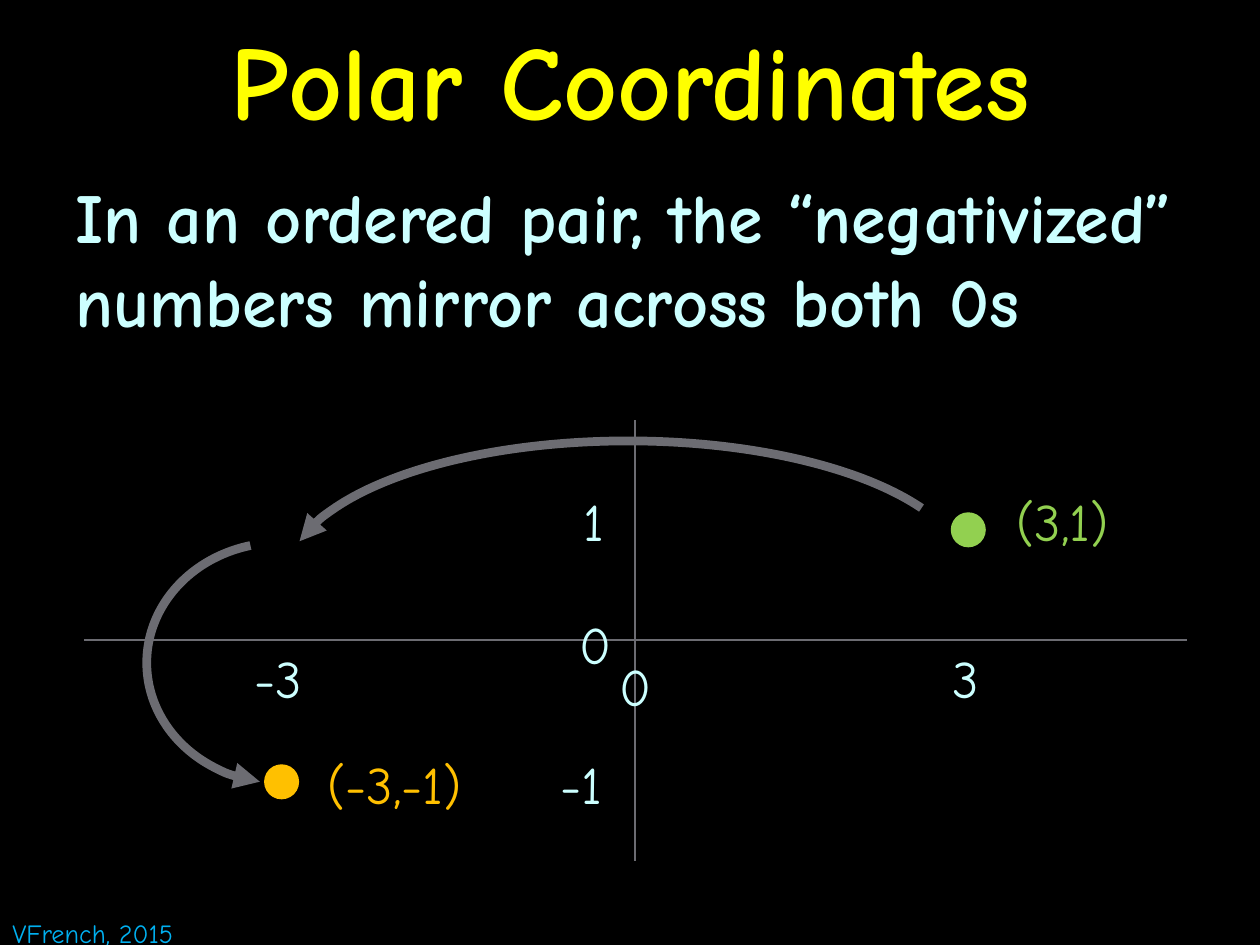
"""Build the Polar Coordinates slide on mirroring an ordered pair across both zeros."""
import dataclasses

import pptx
import pptx.dml.color
import pptx.enum.shapes
import pptx.enum.text
import pptx.oxml
import pptx.oxml.ns
import pptx.util

Inches = pptx.util.Inches
Pt = pptx.util.Pt
RGB = pptx.dml.color.RGBColor.from_string
SHAPE = pptx.enum.shapes.MSO_SHAPE
ANCHOR = pptx.enum.text.MSO_ANCHOR
ALIGN = pptx.enum.text.PP_ALIGN
AUTO = pptx.enum.text.MSO_AUTO_SIZE


@dataclasses.dataclass(frozen=True)
class Theme:
    font: str = "Comic Neue"
    background: str = "000000"
    title: str = "FFFF00"
    text: str = "CCFFFF"
    line: str = "6C6C72"
    credit: str = "00B0F0"
    start: str = "92D050"
    mirrored: str = "FFC000"
    title_size: int = 60
    body_size: int = 40
    label_size: int = 30
    credit_size: int = 15


theme = Theme()


def write(tf, text, size=theme.label_size, color=theme.text, bold=False, align=ALIGN.LEFT):
    p = tf.paragraphs[0]
    p.alignment = align
    r = p.add_run()
    r.text = text
    r.font.name = theme.font
    r.font.size = Pt(size)
    r.font.bold = bold
    r.font.color.rgb = RGB(color)
    return p


prs = pptx.Presentation()
prs.slide_width = Inches(10)
prs.slide_height = Inches(7.5)
s = prs.slides.add_slide(prs.slide_layouts[1])
s.background.fill.solid()
s.background.fill.fore_color.rgb = RGB(theme.background)

title, body = s.placeholders
title.left, title.top, title.width, title.height = map(Inches, (0, 0, 10, 1.25))
title.text_frame.auto_size = AUTO.NONE
title.text_frame.vertical_anchor = ANCHOR.MIDDLE
write(title.text_frame, "Polar Coordinates", size=theme.title_size, color=theme.title,
      bold=True, align=ALIGN.CENTER)

body.left, body.top, body.width, body.height = map(Inches, (0.5, 1.33, 9, 6.17))
body.text_frame.auto_size = AUTO.NONE
p = write(body.text_frame, "In an ordered pair, the “negativized” numbers mirror across both 0s",
          size=theme.body_size, bold=True)
pPr = p._p.get_or_add_pPr()
pPr.set("marL", "0")
pPr.set("indent", "0")
pPr.append(pptx.oxml.parse_xml(f'<a:buNone {pptx.oxml.ns.nsdecls("a")}/>'))

for x1, y1, x2, y2 in [(5.04, 6.83, 5.04, 3.33), (0.67, 5.08, 9.42, 5.08)]:
    axis = s.shapes.add_connector(pptx.enum.shapes.MSO_CONNECTOR.STRAIGHT,
                                  Inches(x1), Inches(y1), Inches(x2), Inches(y2))
    axis.line.color.rgb = RGB(theme.line)
    axis.line.width = Pt(0.75)
    axis._element.spPr.append(pptx.oxml.parse_xml(f'<a:effectLst {pptx.oxml.ns.nsdecls("a")}/>'))

labels = [
    ("3", 7.46, 5.08, 0.46, 0.61, theme.text, theme.label_size),
    ("-3", 1.92, 5.08, 0.63, 0.61, theme.text, theme.label_size),
    ("VFrench, 2015", 0, 7.23, 1.62, 0.35, theme.credit, theme.credit_size),
    ("0", 4.5, 4.81, 0.46, 0.61, theme.text, theme.label_size),
    ("1", 4.53, 3.83, 0.39, 0.61, theme.text, theme.label_size),
    ("(3,1)", 7.97, 3.83, 1.07, 0.61, theme.start, theme.label_size),
    ("(-3,-1)", 2.5, 5.92, 1.42, 0.61, theme.mirrored, theme.label_size),
    ("0", 4.82, 5.14, 0.46, 0.61, theme.text, theme.label_size),
    ("-1", 4.35, 5.92, 0.57, 0.61, theme.text, theme.label_size),
]
for text, x, y, w, h, color, size in labels:
    tf = s.shapes.add_textbox(Inches(x), Inches(y), Inches(w), Inches(h)).text_frame
    tf.word_wrap = False
    tf.auto_size = AUTO.SHAPE_TO_FIT_TEXT
    write(tf, text, size=size, color=color)

arcs = [
    (2.28, 3.5, 5.41, 2.17, 0, 111.79, 208),
    (1.27, 4.2, 1.91, 2.12, 270, 113.86, 207.44),
]
for x, y, w, h, rotation, start, end in arcs:
    sp = s.shapes.add_shape(SHAPE.ARC, Inches(x), Inches(y), Inches(w), Inches(h))
    sp.shadow.inherit = False
    sp.rotation = rotation
    sp.adjustments[0] = start
    sp.adjustments[1] = end
    sp.fill.background()
    sp.line.color.rgb = RGB(theme.line)
    sp.line.width = Pt(5)
    sp.line._get_or_add_ln().append(
        pptx.oxml.parse_xml(f'<a:headEnd {pptx.oxml.ns.nsdecls("a")} type="triangle"/>'))

for x, y, color in [(2.11, 6.08, theme.mirrored), (7.56, 4.08, theme.start)]:
    sp = s.shapes.add_shape(SHAPE.OVAL, Inches(x), Inches(y), Inches(0.25), Inches(0.25))
    sp.shadow.inherit = False
    sp.fill.solid()
    sp.fill.fore_color.rgb = RGB(color)
    sp.line.color.rgb = RGB(color)
    sp.line.width = Pt(2)

prs.save("out.pptx")
